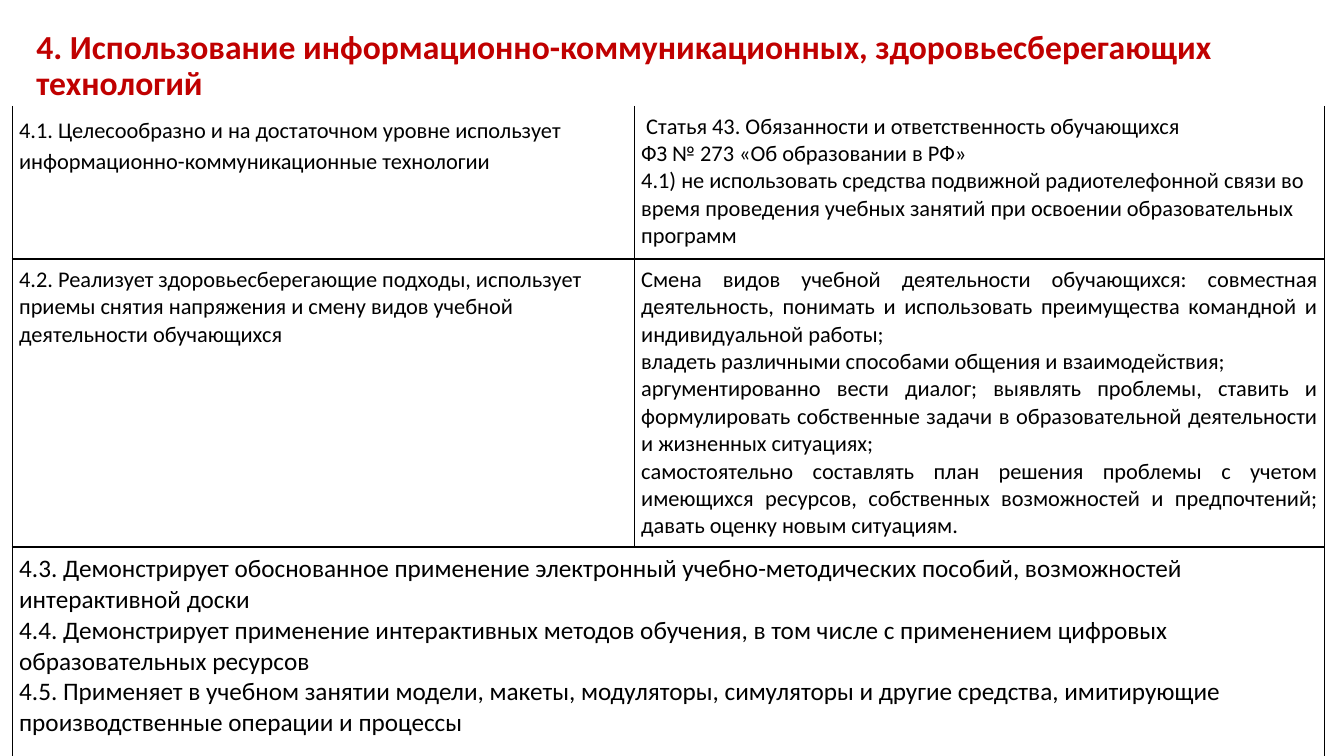
import pptx
import pptx.util
import pptx.dml.color
import pptx.enum.text
import pptx.oxml
import pptx.oxml.ns
from pptx.util import Inches

RED = pptx.dml.color.RGBColor(0xC0, 0x00, 0x00)
BLACK = pptx.dml.color.RGBColor(0x00, 0x00, 0x00)
FONT = "Calibri"
LEFT = pptx.enum.text.PP_ALIGN.LEFT
JUSTIFY = pptx.enum.text.PP_ALIGN.JUSTIFY

TITLE = "4. Использование информационно-коммуникационных, здоровьесберегающих технологий"
ICT = ["4.1. Целесообразно и на достаточном уровне использует информационно-коммуникационные технологии"]
LAW = [
    " Статья 43. Обязанности и ответственность обучающихся ",
    "ФЗ № 273 «Об образовании в РФ»",
    "4.1) не использовать средства подвижной радиотелефонной связи во время проведения учебных занятий при освоении образовательных программ",
]
HEALTH = ["4.2. Реализует здоровьесберегающие подходы, использует приемы снятия напряжения и смену видов учебной деятельности обучающихся"]
ACTIVITIES = [
    "Смена видов учебной деятельности обучающихся: совместная деятельность, понимать и использовать преимущества командной и индивидуальной работы;",
    "владеть различными способами общения и взаимодействия;",
    "аргументированно вести диалог; выявлять проблемы, ставить и формулировать собственные задачи в образовательной деятельности и жизненных ситуациях;",
    "самостоятельно составлять план решения проблемы с учетом имеющихся ресурсов, собственных возможностей и предпочтений; давать оценку новым ситуациям.",
]
TOOLS = [
    "4.3. Демонстрирует обоснованное применение электронный учебно-методических пособий, возможностей интерактивной доски",
    "4.4. Демонстрирует применение интерактивных методов обучения, в том числе с применением цифровых образовательных ресурсов",
    "4.5. Применяет в учебном занятии модели, макеты, модуляторы, симуляторы и другие средства, имитирующие производственные операции и процессы",
]


def add_run(p, text, size, color, bold=False):
    r = p.add_run()
    r.text = text
    r.font.name = FONT
    r.font.size = pptx.util.Pt(size)
    r.font.color.rgb = color
    r.font.bold = bold


def add_title(slide, left, top, width, height):
    sp = slide.shapes.title
    sp.left, sp.top, sp.width, sp.height = left, top, width, height
    tf = sp.text_frame
    tf.word_wrap = True
    tf.auto_size = pptx.enum.text.MSO_AUTO_SIZE.NONE
    tf.vertical_anchor = pptx.enum.text.MSO_ANCHOR.MIDDLE
    p = tf.paragraphs[0]
    p.alignment = LEFT
    p.line_spacing = 0.9
    add_run(p, TITLE, 24, RED, bold=True)


def set_borders(cell, sides):
    """Draw 1 pt black lines on the given sides (L, R, T, B) and none on the rest."""
    props = cell._tc.get_or_add_tcPr()
    ns = pptx.oxml.ns.nsdecls("a")
    for i, side in enumerate("LRTB"):
        fill = f'<a:solidFill><a:srgbClr val="{BLACK}"/></a:solidFill>' if side in sides else "<a:noFill/>"
        line = pptx.oxml.parse_xml(f'<a:ln{side} {ns} w="12700">{fill}</a:ln{side}>')
        props.insert(i, line)


def fill_cell(cell, texts, size=16, aligns=(LEFT,)):
    """Write one paragraph per text; the last alignment holds for the remaining ones."""
    cell.margin_left = cell.margin_right = Inches(0.07)
    cell.margin_top = cell.margin_bottom = Inches(0.07)
    tf = cell.text_frame
    for i, text in enumerate(texts):
        p = tf.add_paragraph() if i else tf.paragraphs[0]
        p.alignment = aligns[min(i, len(aligns) - 1)]
        add_run(p, text, size, BLACK)


def add_criteria_table(slide, left, top, width, height):
    table = slide.shapes.add_table(3, 2, left, top, width, height).table
    table.first_row = table.horz_banding = False
    table.columns[0].width = Inches(6.17)
    table.columns[1].width = width - Inches(6.17)
    for row, row_height in zip(table.rows, (1.52, 2.56, 2.15)):
        row.height = Inches(row_height)
    for i, row in enumerate(table.rows):
        for cell in row.cells:
            cell.fill.background()
            set_borders(cell, "LRTB" if i else "LRB")
    table.cell(2, 0).merge(table.cell(2, 1))

    fill_cell(table.cell(0, 0), ICT)
    p = table.cell(0, 0).text_frame.paragraphs[0]
    p.line_spacing = 1.15
    p.space_after = pptx.util.Pt(10)
    fill_cell(table.cell(0, 1), LAW, aligns=(JUSTIFY, JUSTIFY, LEFT))
    fill_cell(table.cell(1, 0), HEALTH)
    fill_cell(table.cell(1, 1), ACTIVITIES, aligns=(JUSTIFY,))
    fill_cell(table.cell(2, 0), TOOLS, size=18)


def main():
    prs = pptx.Presentation()
    prs.slide_width, prs.slide_height = Inches(13.33), Inches(7.5)
    slide = prs.slides.add_slide(prs.slide_layouts.get_by_name("Title Only"))
    add_title(slide, Inches(0.26), Inches(0.4), Inches(12.74), Inches(0.52))
    add_criteria_table(slide, Inches(0.12), Inches(1.05), Inches(13.02), Inches(6.23))
    prs.save("out.pptx")


if __name__ == "__main__":
    main()
